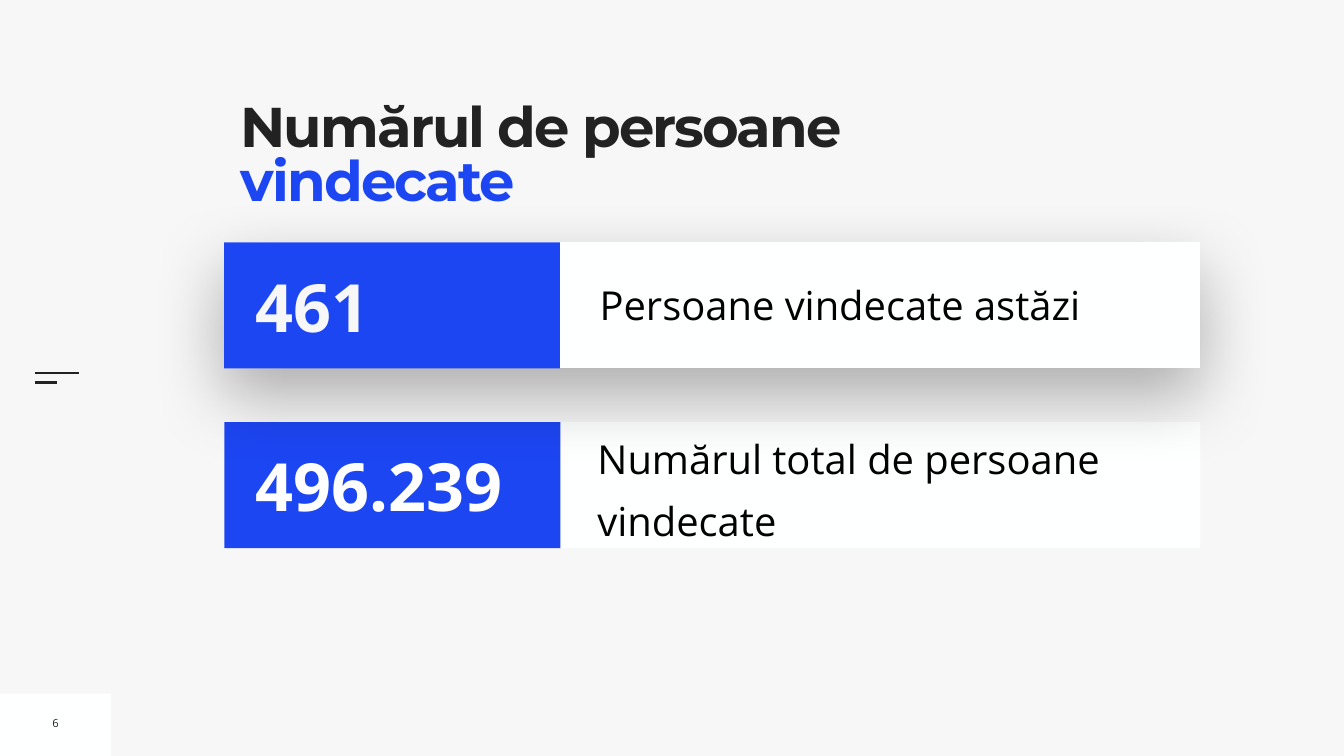
from lxml import etree
from pptx import Presentation
from pptx.dml.color import RGBColor
from pptx.enum.shapes import MSO_CONNECTOR, MSO_SHAPE
from pptx.enum.text import MSO_ANCHOR, MSO_AUTO_SIZE, PP_ALIGN
from pptx.oxml.ns import qn
from pptx.util import Pt

RECTANGLE = MSO_SHAPE.RECTANGLE
STRAIGHT = MSO_CONNECTOR.STRAIGHT
TOP, MIDDLE = MSO_ANCHOR.TOP, MSO_ANCHOR.MIDDLE
LEFT, CENTER = PP_ALIGN.LEFT, PP_ALIGN.CENTER
NO_FIT, GROW = MSO_AUTO_SIZE.NONE, MSO_AUTO_SIZE.SHAPE_TO_FIT_TEXT

BACKGROUND = RGBColor(0xF7, 0xF7, 0xF7)
CARD = RGBColor(0xFE, 0xFF, 0xFF)
WHITE = RGBColor(0xFF, 0xFF, 0xFF)
BLACK = RGBColor(0x00, 0x00, 0x00)
DARK = RGBColor(0x22, 0x22, 0x22)
BLUE = RGBColor(0x1D, 0x46, 0xF3)

CARD_SIZE = (1394, 180)
VALUE_WIDTH = 480
LABEL = {"name": "Open Sans", "size": Pt(57)}
VALUE = {"name": "Open Sans", "size": Pt(95), "bold": True}
TITLE = {"name": "Montserrat", "size": Pt(80), "bold": True}
PAGE = {"name": "Open Sans", "size": Pt(16)}


def set_attributes(target, values):
    for name, value in values.items():
        setattr(target, name, value)


def points(*lengths):
    return [Pt(length) for length in lengths]


def format_frame(frame, margin, **values):
    margins = {f"margin_{side}": Pt(margin) for side in ("left", "top", "right", "bottom")}
    set_attributes(frame, {"word_wrap": True, **margins, **values})


def add_run(paragraph, text, font, color):
    run = paragraph.add_run()
    run.text = text
    set_attributes(run.font, font)
    run.font.color.rgb = color
    return run


def add_rectangle(shapes, box, color):
    rectangle = shapes.add_shape(RECTANGLE, *points(*box))
    rectangle.shadow.inherit = False
    rectangle.fill.solid()
    rectangle.fill.fore_color.rgb = color
    rectangle.line.fill.background()
    return rectangle


def add_text(shapes, box, text, font, color, margin=7.2, wrap=True, **paragraph_format):
    frame = shapes.add_textbox(*points(*box)).text_frame
    format_frame(frame, margin, word_wrap=wrap, vertical_anchor=MIDDLE, auto_size=GROW)
    paragraph = frame.paragraphs[0]
    set_attributes(paragraph, paragraph_format)
    add_run(paragraph, text, font, color)


def add_line(slide, left, top, length):
    line = slide.shapes.add_connector(STRAIGHT, *points(left, top, left + length, top))
    line.line.color.rgb = DARK
    line.line.width = Pt(3)
    etree.SubElement(line._element.spPr, qn("a:effectLst"))


def add_soft_shadow(shape):
    effects = shape._element.spPr.find(qn("a:effectLst"))
    shadow = etree.SubElement(effects, qn("a:outerShdw"), blurRad=str(Pt(100)),
                              dist=str(Pt(40)), dir="5400000", rotWithShape="0")
    color = etree.SubElement(shadow, qn("a:srgbClr"), val=str(BLACK))
    etree.SubElement(color, qn("a:alpha"), val="30000")


def add_title(slide):
    title = slide.shapes.title
    set_attributes(title, dict(zip(("left", "top", "width", "height"),
                                   points(343.5, 149, 937, 196.5))))
    title.fill.solid()
    title.fill.fore_color.rgb = BACKGROUND
    format_frame(title.text_frame, 0, vertical_anchor=TOP, auto_size=NO_FIT)
    paragraph = title.text_frame.paragraphs[0]
    set_attributes(paragraph, {"alignment": LEFT, "line_spacing": 0.8})
    for text, color in (("Numărul de persoane ", DARK), ("vindecate", BLUE)):
        run = add_run(paragraph, text, TITLE, color)
        run.font._element.set("spc", "-270")


def add_card(slide, left, top, value, value_color, label, label_box, shadow=False, **label_format):
    """Group a white card, its label and a blue panel with the value."""
    shapes = slide.shapes.add_group_shape().shapes
    card = add_rectangle(shapes, (left, top, *CARD_SIZE), CARD)
    if shadow:
        add_soft_shadow(card)
    add_text(shapes, label_box, label, LABEL, BLACK, **label_format)
    add_rectangle(shapes, (left, top + 0.5, VALUE_WIDTH, CARD_SIZE[1]), BLUE)
    add_text(shapes, (left + 38, top + 25.7, 434, 130), value, VALUE, value_color)


def main():
    presentation = Presentation()
    set_attributes(presentation, {"slide_width": Pt(1920), "slide_height": Pt(1080)})
    slide = presentation.slides.add_slide(presentation.slide_layouts[5])
    slide.background.fill.solid()
    slide.background.fill.fore_color.rgb = BACKGROUND

    add_rectangle(slide.shapes, (0, 991, 158.5, 89), CARD)
    add_line(slide, 50, 533.5, 63)
    add_line(slide, 50, 546.5, 31.5)
    add_title(slide)
    add_text(slide.shapes, (67, 1014.5, 24.5, 36.5), "6", PAGE, DARK, wrap=False,
             alignment=CENTER)
    add_card(slide, 320.5, 602.75, "496.239", WHITE, "Numărul total de persoane vindecate",
             (853.5, 604, 860, 170), margin=0, line_spacing=1.3, space_before=Pt(20))
    add_card(slide, 320, 345.75, "461", BACKGROUND, "Persoane vindecate astăzi",
             (849.5, 394, 847, 83.5), shadow=True)
    presentation.save("out.pptx")


if __name__ == "__main__":
    main()
